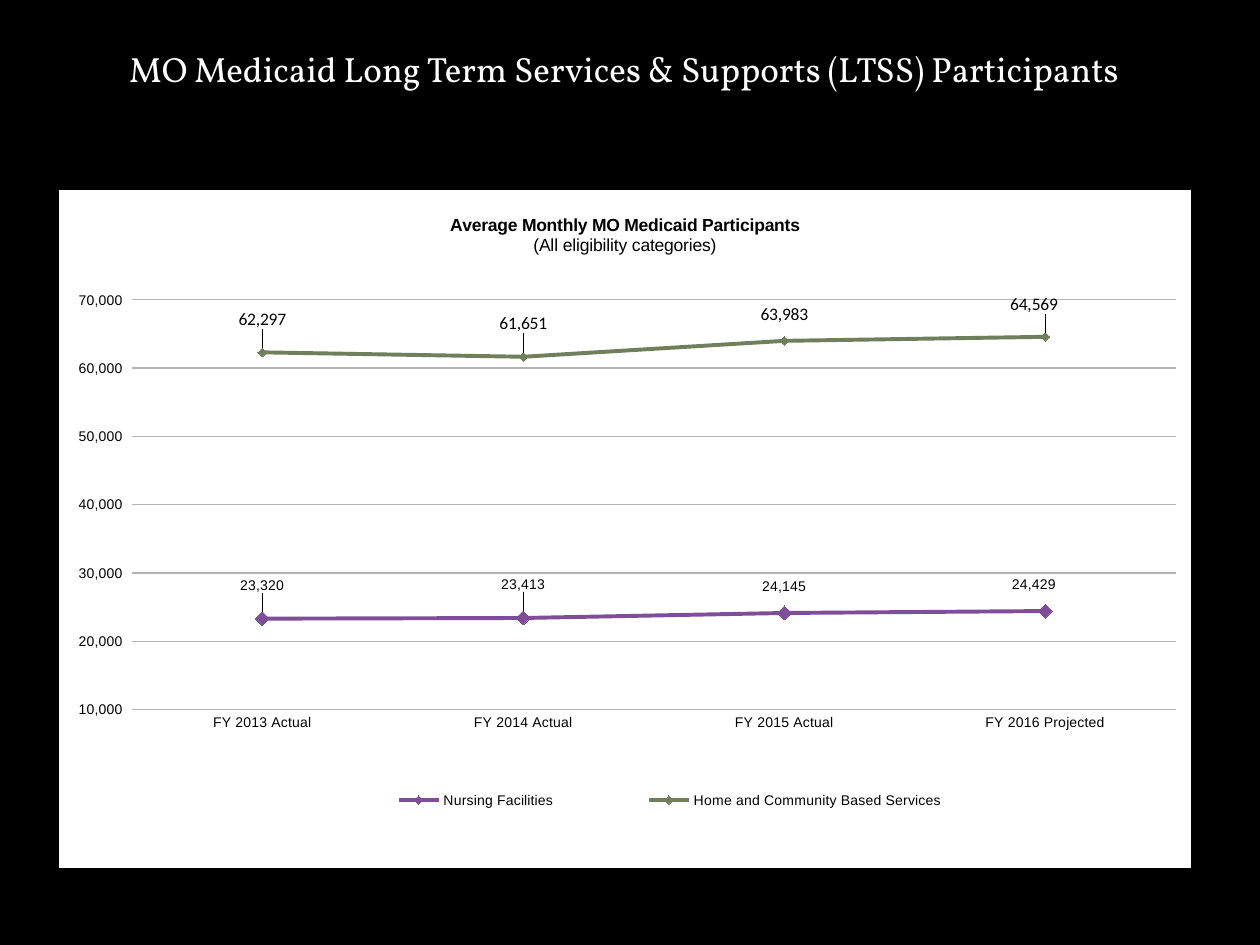
from pptx import Presentation, util as u
from pptx.chart.data import CategoryChartData
from pptx.dml.color import RGBColor
from pptx.enum import chart as ch, text
from pptx.oxml import parse_xml
from pptx.oxml.ns import nsdecls

BLACK = RGBColor(0x00, 0x00, 0x00)
WHITE = RGBColor(0xFF, 0xFF, 0xFF)
GRID = RGBColor(0xB3, 0xB3, 0xB3)
PURPLE = RGBColor(0x7E, 0x4E, 0x99)
GREEN = RGBColor(0x6F, 0x7F, 0x5B)
NUMBER = '_(* #,##0_);_(* \\(#,##0\\);_(* "-"??_);_('
YEARS = ["FY 2013 Actual", "FY 2014 Actual", "FY 2015 Actual", "FY 2016 Projected"]
SERIES = [
    ("Nursing Facilities", [23320, 23413, 24145, 24429], PURPLE, 8, "Arial", 8,
     [(0, -0.02), (0, -0.02), (0, -0.01), (-0.01, -0.01)]),
    ("Home and Community Based Services", [62297, 61651, 63983, 64569], GREEN, 5, "Calibri", 10,
     [(0, -0.02), (0, -0.02), (0, -0.01), (-0.01, -0.02)]),
]


class Deck:
    """Style and current slide, with one method per kind of element."""

    def __init__(self, s):
        self.s = s
        fill = s.background.fill
        fill.solid()
        fill.fore_color.rgb = BLACK

    def font(self, f, name, size, color=BLACK, bold=False):
        f.name, f.size, f.bold = name, u.Pt(size), bold
        f.color.rgb = color

    def layout(self, parts):
        tags = "".join(f'<c:{k} val="{v}"/>' for k, v in parts.items())
        return parse_xml(f'<c:layout {nsdecls("c")}><c:manualLayout>{tags}'
                         '</c:manualLayout></c:layout>')

    def frame(self, x, y, w, h):
        return {"xMode": "edge", "yMode": "edge", "x": x, "y": y, "w": w, "h": h}

    def heading(self, words, *box):
        tf = self.s.shapes.add_textbox(*map(u.Inches, box)).text_frame
        tf.word_wrap = True
        tf.auto_size = text.MSO_AUTO_SIZE.SHAPE_TO_FIT_TEXT
        tf.text = words
        p = tf.paragraphs[0]
        p.alignment = text.PP_ALIGN.CENTER
        self.font(p.runs[0].font, "Vollkorn", 20, WHITE)

    def line_chart(self, title, subtitle, *box):
        data = CategoryChartData(number_format=NUMBER)
        data.categories = YEARS
        for name, values, *_ in SERIES:
            data.add_series(name, values)
        chart = self.s.shapes.add_chart(
            ch.XL_CHART_TYPE.LINE_MARKERS, *map(u.Inches, box), data).chart
        self.font(chart.font, "Calibri", 10)
        chart.plots[0].vary_by_categories = False
        area = parse_xml(
            f'<c:spPr {nsdecls("c", "a")}><a:solidFill><a:srgbClr val="{WHITE}"/></a:solidFill>'
            f'<a:ln w="3175"><a:solidFill><a:srgbClr val="{BLACK}"/></a:solidFill></a:ln></c:spPr>')
        chart.element.chart.addnext(area)
        self.chart_title(chart, title, subtitle)
        self.axes(chart)
        self.legend(chart)
        for series, row in zip(chart.plots[0].series, SERIES):
            self.series(series, *row[2:])

    def chart_title(self, chart, title, subtitle):
        tf = chart.chart_title.text_frame
        tf.text = title
        tf.add_paragraph().text = subtitle
        for p, bold in zip(tf.paragraphs, (True, False)):
            self.font(p.runs[0].font, "Arial", 10, bold=bold)
        chart.chart_title.include_in_layout = False

    def axes(self, chart):
        cat, val = chart.category_axis, chart.value_axis
        for axis in (cat, val):
            axis.major_tick_mark = axis.minor_tick_mark = ch.XL_TICK_MARK.NONE
            self.font(axis.tick_labels.font, "Arial", 8)
        cat.format.line.color.rgb = GRID
        val.format.line.fill.background()
        val.minimum_scale, val.maximum_scale, val.major_unit = 10000, 70000, 10000
        val.tick_labels.number_format = NUMBER
        val.tick_labels.number_format_is_linked = False
        val.major_gridlines.format.line.color.rgb = GRID
        val.major_gridlines.format.line.width = u.Pt(0.75)
        area = chart.element.chart.plotArea
        for old in area.xpath("c:layout"):
            area.remove(old)
        area.insert(0, self.layout({"layoutTarget": "inner", **self.frame(0.065, 0.163, 0.921, 0.604)}))

    def legend(self, chart):
        chart.has_legend = True
        legend = chart.legend
        legend.position = ch.XL_LEGEND_POSITION.RIGHT
        legend.include_in_layout = False
        self.font(legend.font, "Arial", 8)
        node = chart.element.xpath("c:chart/c:legend")[0]
        for old in node.xpath("c:layout"):
            node.remove(old)
        node.xpath("c:legendPos")[0].addnext(self.layout(self.frame(0.22, 0.85, 0.64, 0.1)))

    def series(self, series, color, marker, face, size, shifts):
        series.smooth = False
        series.format.line.color.rgb = color
        series.format.line.width = u.Pt(2.25)
        series.marker.style = ch.XL_MARKER_STYLE.DIAMOND
        series.marker.size = marker
        series.marker.format.fill.solid()
        series.marker.format.fill.fore_color.rgb = color
        series.marker.format.line.color.rgb = color
        labels = series.data_labels
        labels.show_value = True
        labels.position = ch.XL_LABEL_POSITION.ABOVE
        labels.number_format = NUMBER
        labels.number_format_is_linked = False
        self.font(labels.font, face, size)
        for i, (dx, dy) in enumerate(shifts):
            label = series.points[i].data_label
            self.font(label.font, face, size)
            label.position = ch.XL_LABEL_POSITION.ABOVE
            idx = series.data_labels._element.xpath(f'c:dLbl/c:idx[@val="{i}"]')[0]
            idx.addnext(self.layout({"x": dx, "y": dy}))


def main():
    prs = Presentation()
    prs.slide_width, prs.slide_height = u.Inches(10), u.Inches(7.5)
    deck = Deck(prs.slides.add_slide(prs.slide_layouts[6]))
    deck.heading("MO Medicaid Long Term Services & Supports (LTSS) Participants", 0.08, 0.33, 9.75, 0.44)
    deck.line_chart("Average Monthly MO Medicaid Participants", "(All eligibility categories)",
                    0.46, 1.5, 9, 5.39)
    prs.save("out.pptx")


if __name__ == "__main__":
    main()
